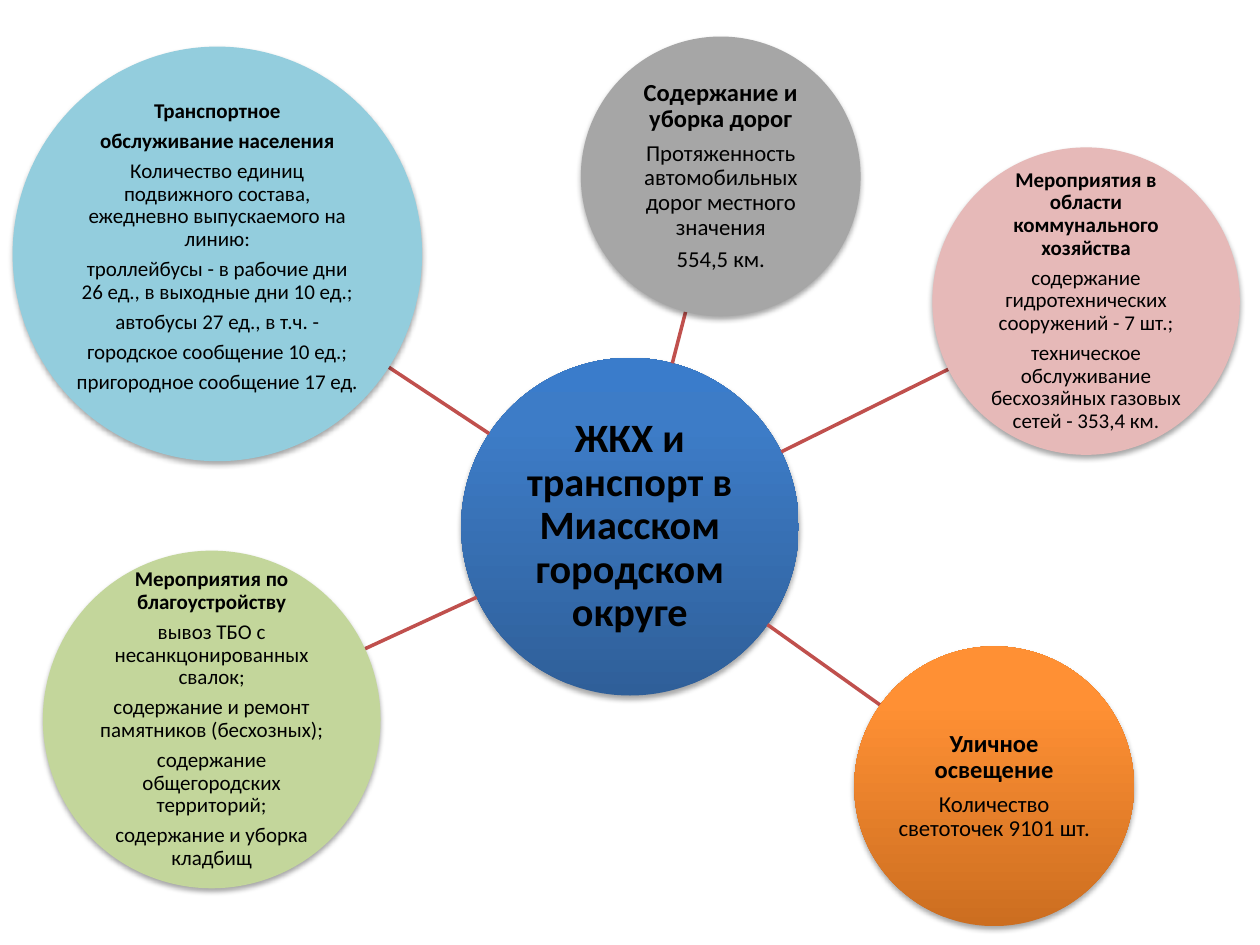
"""Build a hub-and-spoke slide about municipal utilities and transport."""
import copy
import math
from collections import namedtuple

from lxml import etree
from pptx import Presentation
from pptx import util as u
from pptx.dml import color
from pptx.enum import shapes, text
from pptx.oxml import ns

COLUMNS, ROWS = 100, 75
WIDTH, HEIGHT = u.Inches(10), u.Inches(7.5)
FONT, INK, SPOKE = "Calibri", "000000", "C0504D"

Box = namedtuple("Box", "left top width height")
Topic = namedtuple("Topic", "box fill headings details heading_size detail_size bottom_inset",
                   defaults=(12, 12, 0.01))

HUB = Topic(Box(36.6, 28.4, 26.8, 26.8), ("2F5F99", "3D7CC7", "3A7CCB"),
            ["ЖКХ и транспорт в Миасском городском округе"], [], 23)
TOPICS = [
    Topic(Box(1, 3.7, 32.5, 32.9), "93CDDD",
          ["Транспортное", "обслуживание населения"],
          ["Количество единиц подвижного состава, ежедневно выпускаемого на линию:",
           "троллейбусы - в рабочие дни\n26 ед., в выходные дни 10 ед.;",
           "автобусы 27 ед., в т.ч. -",
           "городское сообщение 10 ед.;",
           "пригородное сообщение 17 ед."], bottom_inset=0.12),
    Topic(Box(46.1, 2.9, 22.2, 22.2), "A6A6A6",
          ["Содержание и уборка дорог"],
          ["Протяженность автомобильных дорог местного значения", "554,5 км."], 14, 13),
    Topic(Box(74, 11.7, 24.4, 24.4), "E6B9B8",
          ["Мероприятия в\nобласти коммунального хозяйства"],
          ["содержание гидротехнических сооружений - 7 шт.;",
           "техническое обслуживание бесхозяйных газовых сетей - 353,4 км."]),
    Topic(Box(3.4, 43.7, 26.8, 26.8), "C3D69B",
          ["Мероприятия по благоустройству"],
          ["вывоз ТБО с несанкцонированных свалок;",
           "содержание и ремонт памятников (бесхозных);",
           "содержание общегородских территорий;",
           "содержание и уборка кладбищ"]),
    Topic(Box(67.8, 51.3, 22.2, 22.2), ("CC6E20", "FF9034", "FF9136"),
          ["Уличное освещение"], ["Количество светоточек 9101 шт."], 14, 13),
]


def rgb(value):
    """Turn a hex string into a colour."""
    return color.RGBColor.from_string(value)


def across(columns):
    """Turn grid columns into a slide length."""
    return round(WIDTH * columns / COLUMNS)


def down(rows):
    """Turn grid rows into a slide length."""
    return round(HEIGHT * rows / ROWS)


def paint(shape, fill):
    """Fill a shape with one colour or with a three-stop upward gradient."""
    if isinstance(fill, str):
        shape.fill.solid()
        shape.fill.fore_color.rgb = rgb(fill)
        return
    shape.fill.gradient()
    shape.fill.gradient_angle = 90
    stop_list = shape.element.xpath(".//a:gsLst")[0]
    stop_list.append(copy.deepcopy(stop_list[-1]))
    for stop, value, position in zip(shape.fill.gradient_stops, fill, (0, 0.8, 1)):
        stop.color.rgb = rgb(value)
        stop.position = position


def add_shadow(shape):
    """Give a shape a soft shadow that falls straight down."""
    shape.shadow.inherit = False
    effects = shape.element.spPr.find(ns.qn("a:effectLst"))
    shadow = etree.SubElement(effects, ns.qn("a:outerShdw"), blurRad=str(u.Pt(3.1)),
                              dist=str(u.Pt(1.8)), dir="5400000", rotWithShape="0")
    shade = etree.SubElement(shadow, ns.qn("a:srgbClr"), val=INK)
    etree.SubElement(shade, ns.qn("a:alpha"), val="35000")


def write_paragraph(paragraph, content, size, bold):
    """Write centred lines into one paragraph."""
    paragraph.alignment = text.PP_ALIGN.CENTER
    paragraph.line_spacing = 0.9
    paragraph.space_after = u.Pt(size * 0.35)
    for number, line in enumerate(content.split("\n")):
        if number:
            paragraph.add_line_break()
        run = paragraph.add_run()
        run.text = line
        run.font.name, run.font.size, run.font.bold = FONT, u.Pt(size), bold
        run.font.color.rgb = rgb(INK)


def add_circle(slide, topic):
    """Place a topic's circle with its headings and details."""
    box = topic.box
    shape = slide.shapes.add_shape(shapes.MSO_SHAPE.OVAL, across(box.left), down(box.top),
                                   across(box.width), down(box.height))
    paint(shape, topic.fill)
    shape.line.fill.background()
    add_shadow(shape)
    frame = shape.text_frame
    frame.word_wrap = True
    frame.vertical_anchor = text.MSO_ANCHOR.MIDDLE
    frame.margin_left = frame.margin_right = frame.margin_top = u.Inches(0.01)
    frame.margin_bottom = u.Inches(topic.bottom_inset)
    entries = [(heading, topic.heading_size, True) for heading in topic.headings]
    entries += [(detail, topic.detail_size, False) for detail in topic.details]
    for number, entry in enumerate(entries):
        paragraph = frame.add_paragraph() if number else frame.paragraphs[0]
        write_paragraph(paragraph, *entry)


def centre(box):
    """Return the middle of a box."""
    return box.left + box.width / 2, box.top + box.height / 2


def edge_point(box, target):
    """Return where the ray from a box's centre to a target leaves its ellipse."""
    x, y = centre(box)
    dx, dy = target[0] - x, target[1] - y
    share = 1 / math.hypot(dx / (box.width / 2), dy / (box.height / 2))
    return across(x + dx * share), down(y + dy * share)


def add_spoke(slide, hub, box):
    """Draw the line between the hub's edge and a topic's edge."""
    start, end = edge_point(hub, centre(box)), edge_point(box, centre(hub))
    spoke = slide.shapes.add_connector(shapes.MSO_CONNECTOR.STRAIGHT, *start, *end)
    spoke.line.color.rgb = rgb(SPOKE)
    spoke.line.width = u.Pt(2)
    etree.SubElement(spoke.element.spPr, ns.qn("a:effectLst"))


def main():
    """Build and save the presentation."""
    presentation = Presentation()
    presentation.slide_width, presentation.slide_height = WIDTH, HEIGHT
    slide = presentation.slides.add_slide(presentation.slide_layouts[6])
    add_circle(slide, HUB)
    for topic in TOPICS:
        add_spoke(slide, HUB.box, topic.box)
        add_circle(slide, topic)
    presentation.save("out.pptx")


if __name__ == "__main__":
    main()
